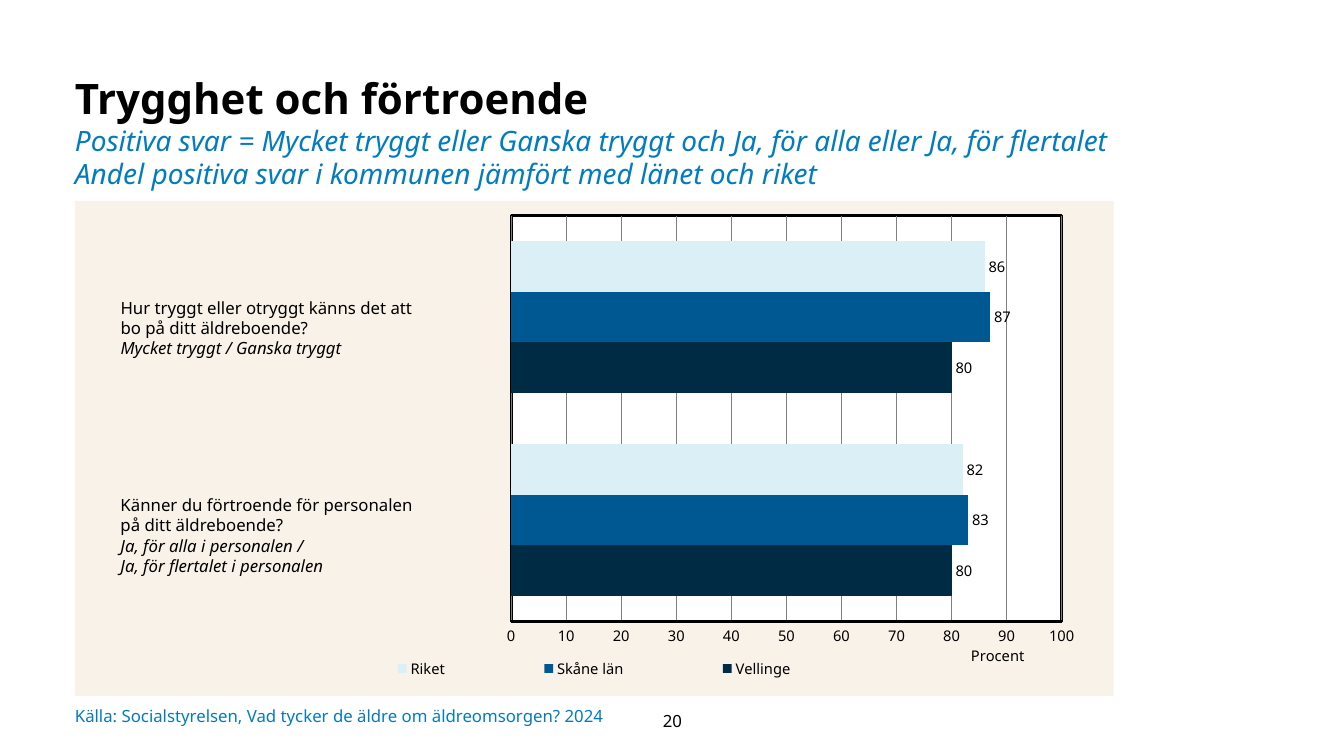
import pptx
import pptx.chart.data
import pptx.dml.color
import pptx.enum.chart
import pptx.enum.text
import pptx.oxml
import pptx.oxml.ns
import pptx.util
from dataclasses import dataclass

Pt = pptx.util.Pt
ANCHOR = pptx.enum.text.MSO_ANCHOR
ALIGN = pptx.enum.text.PP_ALIGN


@dataclass(frozen=True)
class Theme:
    font: str = "Noto Sans"
    black: str = "000000"
    white: str = "FFFFFF"
    blue: str = "017CC1"
    panel: str = "F8F2E8"
    grid: str = "7F7F7F"
    navy: str = "002B45"
    mid_blue: str = "005892"
    pale_blue: str = "DBF0F6"
    heading: float = 30
    subtitle: float = 20
    body: float = 12
    chart: float = 10.5


def rgb(color):
    return pptx.dml.color.RGBColor.from_string(color)


def layout_xml(inner=None, **fractions):
    """Manual chart layout; x, y, w and h are fractions of the chart."""
    parts = [f'<c:layoutTarget val="{inner}"/>'] if inner else []
    parts += [f'<c:{k}Mode val="edge"/>' for k in "xy"]
    parts += [f'<c:{k} val="{v}"/>' for k, v in fractions.items()]
    ns = pptx.oxml.ns.nsdecls("c")
    return pptx.oxml.parse_xml(
        f'<c:layout {ns}><c:manualLayout>{"".join(parts)}</c:manualLayout></c:layout>')


def set_layout(element, after, **kwargs):
    """Place a layout in a chart part, after the child named, or first."""
    for old in element.findall(pptx.oxml.ns.qn("c:layout")):
        element.remove(old)
    anchor = element.find(pptx.oxml.ns.qn(after)) if after else None
    position = 0 if anchor is None else element.index(anchor) + 1
    element.insert(position, layout_xml(**kwargs))


def add_shape_format(element, before, fill, line, width):
    ns = pptx.oxml.ns.nsdecls("c", "a")
    solid = '<a:solidFill><a:srgbClr val="{}"/></a:solidFill>'
    border = f'<a:ln w="{Pt(width)}">{solid.format(line)}</a:ln>' if line else "<a:ln><a:noFill/></a:ln>"
    sp_pr = pptx.oxml.parse_xml(f"<c:spPr {ns}>{solid.format(fill)}{border}</c:spPr>")
    following = element.find(pptx.oxml.ns.qn(before)) if before else None
    if following is None:
        element.append(sp_pr)
    else:
        following.addprevious(sp_pr)


class SlideBuilder:
    def __init__(self, prs, theme):
        self.theme = theme
        self.s = prs.slides.add_slide(prs.slide_layouts[5])

    def style(self, font, size, color=None, bold=False, italic=False):
        font.name = self.theme.font
        font.size = Pt(size)
        font.bold, font.italic = bold, italic
        font.color.rgb = rgb(color or self.theme.black)

    def frame(self, tf, anchor, insets):
        tf.word_wrap = True
        tf.auto_size = pptx.enum.text.MSO_AUTO_SIZE.NONE
        tf.vertical_anchor = anchor
        tf.margin_left, tf.margin_top, tf.margin_right, tf.margin_bottom = map(Pt, insets)

    def title(self, box, heading, lines):
        sp = self.s.shapes.title
        sp.left, sp.top, sp.width, sp.height = map(Pt, box)
        self.frame(sp.text_frame, ANCHOR.TOP, (0, 0, 7.2, 3.6))
        p = sp.text_frame.paragraphs[0]
        p.alignment = ALIGN.LEFT
        p.line_spacing = 1.0
        r = p.add_run()
        r.text = heading
        self.style(r.font, self.theme.heading, bold=True)
        for line in lines:
            p.add_line_break()
            r = p.add_run()
            r.text = line
            self.style(r.font, self.theme.subtitle, self.theme.blue, italic=True)

    def text(self, box, paragraphs, color=None, anchor=ANCHOR.TOP,
             insets=(7.2, 3.6, 7.2, 3.6), align=ALIGN.LEFT):
        """The first paragraph is upright, those after it italic."""
        tf = self.s.shapes.add_textbox(*map(Pt, box)).text_frame
        self.frame(tf, anchor, insets)
        for i, line in enumerate(paragraphs):
            p = tf.paragraphs[0] if i == 0 else tf.add_paragraph()
            p.text = line
            p.alignment = align
            self.style(p.font, self.theme.body, color, italic=i > 0)

    def bar_chart(self, box, categories, series, axis_title):
        t = self.theme
        data = pptx.chart.data.CategoryChartData(number_format="0")
        data.categories = categories
        for name, values, _ in series:
            data.add_series(name, values)
        kind = pptx.enum.chart.XL_CHART_TYPE.BAR_CLUSTERED
        chart = self.s.shapes.add_chart(kind, *map(Pt, box), data).chart
        self.style(chart.font, t.chart)
        chart.has_title = False

        # Bars and value labels
        plot = chart.plots[0]
        plot.gap_width, plot.overlap = 100, 0
        plot.vary_by_categories = False
        for ser, (_, _, color) in zip(plot.series, series):
            ser.format.fill.solid()
            ser.format.fill.fore_color.rgb = rgb(color)
            ser.data_labels.show_value = True
            ser.data_labels.position = pptx.enum.chart.XL_LABEL_POSITION.OUTSIDE_END
            self.style(ser.data_labels.font, t.chart)

        # Axes
        chart.category_axis.visible = False
        axis = chart.value_axis
        axis.minimum_scale, axis.maximum_scale, axis.major_unit = 0, 100, 10
        axis.major_tick_mark = pptx.enum.chart.XL_TICK_MARK.NONE
        axis.format.line.color.rgb = rgb(t.black)
        axis.format.line.width = Pt(2)
        axis.major_gridlines.format.line.color.rgb = rgb(t.grid)
        axis.major_gridlines.format.line.width = Pt(0.75)
        self.style(axis.tick_labels.font, t.chart)
        p = axis.axis_title.text_frame.paragraphs[0]
        p.text = axis_title
        self.style(p.font, t.chart)
        set_layout(axis.axis_title._element, "c:tx", x=0.86, y=0.89)

        # Legend
        chart.has_legend = True
        chart.legend.position = pptx.enum.chart.XL_LEGEND_POSITION.BOTTOM
        chart.legend.include_in_layout = False
        self.style(chart.legend.font, t.chart)
        set_layout(chart.legend._element, "c:legendPos", x=0.22, y=0.92, w=0.56, h=0.05)

        # Plot area and chart panel
        space = chart._chartSpace
        area = space.chart.plotArea
        set_layout(area, None, inner="inner", x=0.42, y=0.03, w=0.53, h=0.82)
        add_shape_format(area, None, t.white, t.black, 2)
        add_shape_format(space, "c:txPr", t.panel, None, 0)


def main():
    prs = pptx.Presentation()
    prs.slide_width, prs.slide_height = Pt(960), Pt(540)
    t = Theme()
    slide = SlideBuilder(prs, t)
    left = 53.5

    # Heading
    slide.title((left, 52, 760, 91), "Trygghet och förtroende", [
        "Positiva svar = Mycket tryggt eller Ganska tryggt och Ja, för alla eller Ja, för flertalet",
        "Andel positiva svar i kommunen jämfört med länet och riket"])

    # Chart
    slide.bar_chart((left, 143.5, 742, 353.5), ["1", "2"], [
        ("Vellinge", (80, 80), t.navy),
        ("Skåne län", (83, 87), t.mid_blue),
        ("Riket", (82, 86), t.pale_blue)], "Procent")

    # Questions beside the bars
    slide.text((79, 209, 223, 63), [
        "Hur tryggt eller otryggt känns det att bo på ditt äldreboende?",
        "Mycket tryggt / Ganska tryggt"])
    slide.text((79, 350, 235, 78), [
        "Känner du förtroende för personalen på ditt äldreboende?",
        "Ja, för alla i personalen /",
        "Ja, för flertalet i personalen"])

    # Source and page number
    slide.text((left, 500.5, 398, 21), ["Källa: Socialstyrelsen, Vad tycker de äldre om äldreomsorgen? 2024"],
               t.blue, ANCHOR.MIDDLE, (0, 0, 0, 0))
    slide.text((443.5, 500.5, 73.5, 29), ["20"], anchor=ANCHOR.MIDDLE, align=ALIGN.CENTER)

    prs.save("out.pptx")


if __name__ == "__main__":
    main()
